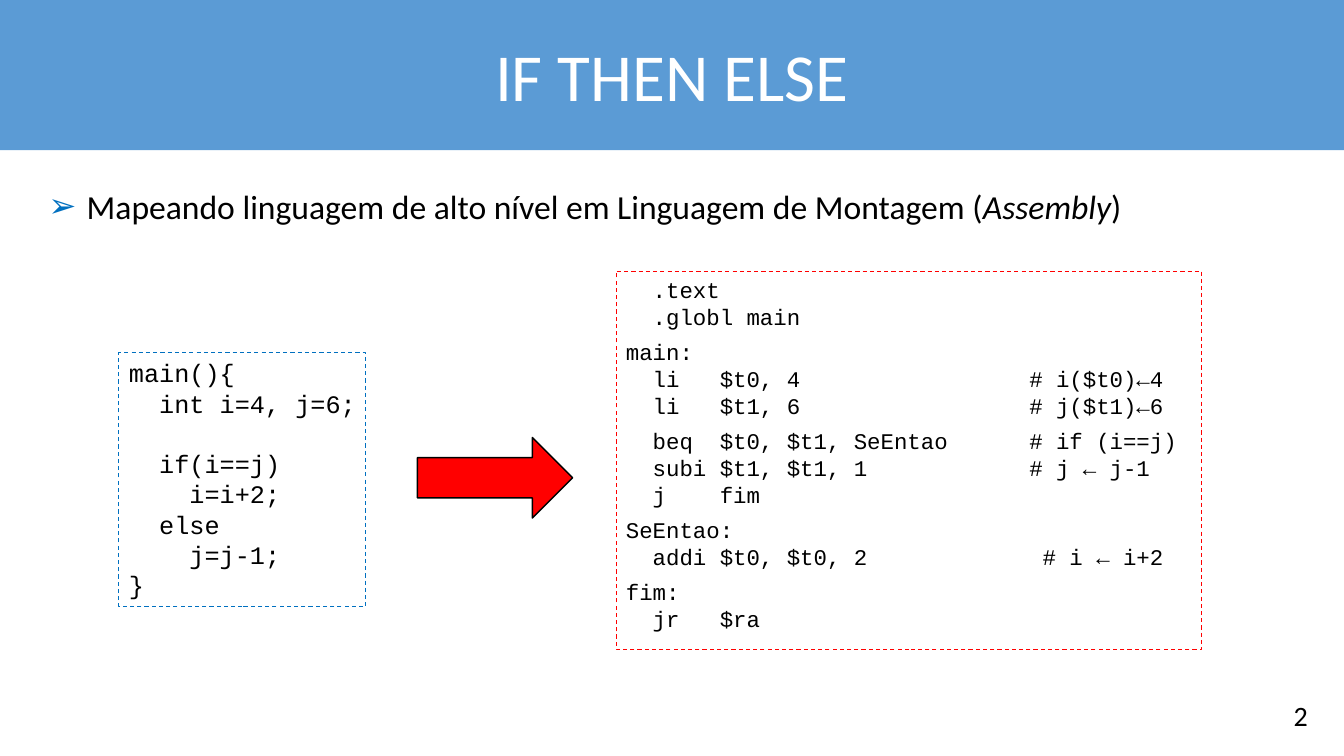
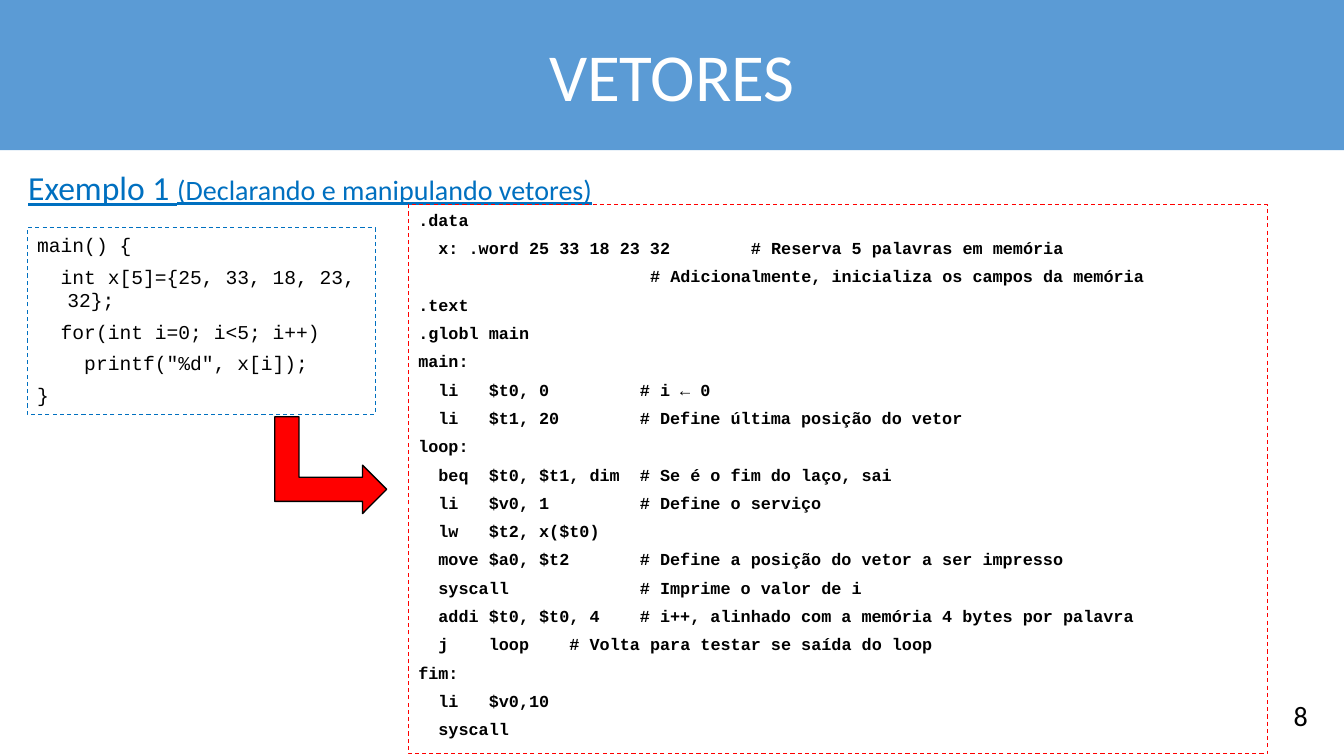
from lxml import etree
from pptx import Presentation
from pptx import util as u
from pptx.dml.color import RGBColor
from pptx.enum import dml, shapes, text
from pptx.oxml.ns import qn

Inches, Pt = u.Inches, u.Pt
COLORS = {"band": "5B9BD5", "white": "FFFFFF", "black": "000000",
          "blue": "0070C0", "red": "FF0000"}
PROSE, CODE = "Calibri", "Courier New"
LINE_HEIGHT = 1.2  # line pitch of code, relative to its font size
BAND = (0, 0, 13.33, 1.49)
NUMBER_BOX = (12.28, 6.88, 0.79, 0.44)

# Code is a list of groups of lines; "group_gap" separates the groups.
# "tab" is the distance between tab positions.
SLIDES = [
    {
        "title": "IF THEN ELSE",
        "number": "2",
        "heading": {
            "at": (0.38, 1.79, 11.18, 0.5), "bullet": "➢",
            "runs": [
                ("Mapeando linguagem de alto nível em Linguagem de Montagem (",
                 {"size": 24}),
                ("Assembly", {"size": 24, "italic": True}),
                (")", {"size": 24}),
            ],
        },
        "listings": [
            {
                "at": (1.18, 3.5, 2.45, 2.52), "border": "blue",
                "font": {"size": 18}, "group_gap": 21.6,
                "groups": [
                    ["main(){", "  int i=4, j=6;"],
                    ["  if(i==j)", "    i=i+2;", "  else", "    j=j-1;", "}"],
                ],
            },
            {
                "at": (6.11, 2.69, 5.81, 3.75), "border": "red",
                "font": {"size": 16}, "group_gap": 6, "tab": 4,
                "groups": [
                    ["  .text", "  .globl main"],
                    ["main:",
                     "  li   $t0, 4\t# i($t0)←4",
                     "  li   $t1, 6\t# j($t1)←6"],
                    ["  beq  $t0, $t1, SeEntao\t# if (i==j)",
                     "  subi $t1, $t1, 1\t# j ← j-1",
                     "  j    fim"],
                    ["SeEntao:", "  addi $t0, $t0, 2\t # i ← i+2"],
                    ["fim:", "  jr   $ra"],
                ],
            },
        ],
        "arrow": {"at": (4.14, 4.34, 1.54, 0.8), "rotation": 0,
                  "preset": shapes.MSO_SHAPE.RIGHT_ARROW},
    },
    {
        "title": "VETORES",
        "number": "8",
        "heading": {
            "at": (0.18, 1.61, 6.03, 0.5),
            "runs": [
                ("Exemplo 1 ",
                 {"size": 24, "underline": True, "color": "blue"}),
                ("(Declarando e manipulando vetores)",
                 {"size": 20, "underline": True, "color": "blue"}),
            ],
        },
        "listings": [
            {
                "at": (0.27, 2.26, 3.45, 1.85), "border": "blue",
                "font": {"size": 14}, "line_gap": 5.8, "hang": 0.3,
                "groups": [[
                    "main() {",
                    "  int x[5]={25, 33, 18, 23, 32};",
                    "  for(int i=0; i<5; i++)",
                    '    printf("%d", x[i]);',
                    "}",
                ]],
            },
            {
                "at": (4.05, 2.03, 8.52, 5.45), "border": "red",
                "font": {"size": 12, "bold": True}, "line_gap": 5.8,
                "hang": 0.3, "tab": 1,
                "groups": [[
                    ".data",
                    "  x: .word 25 33 18 23 32 \t# Reserva 5 palavras em memória",
                    "                     \t# Adicionalmente, inicializa os campos da memória",
                    ".text",
                    ".globl main",
                    "main:",
                    "  li   $t0, 0         # i ← 0",
                    "  li   $t1, 20        # Define última posição do vetor",
                    "loop:",
                    "  beq  $t0, $t1, dim  # Se é o fim do laço, sai",
                    "  li   $v0, 1         # Define o serviço",
                    "  lw   $t2, x($t0)",
                    "  move $a0, $t2       # Define a posição do vetor a ser impresso",
                    "  syscall             # Imprime o valor de i",
                    "  addi $t0, $t0, 4    # i++, alinhado com a memória 4 bytes por palavra",
                    "  j    loop \t  # Volta para testar se saída do loop",
                    "fim:",
                    "  li   $v0,10",
                    "  syscall",
                ]],
            },
        ],
        "arrow": {"at": (2.8, 4.06, 0.96, 1.11), "rotation": 90,
                  "preset": shapes.MSO_SHAPE.BENT_UP_ARROW},
    },
]


def rgb(name):
    return RGBColor.from_string(COLORS[name])


def place(part, at):
    part.left, part.top, part.width, part.height = map(Inches, at)


def set_frame(part, anchor=text.MSO_ANCHOR.TOP, side=0.1):
    frame = part.text_frame
    settings = {
        "word_wrap": True, "auto_size": text.MSO_AUTO_SIZE.NONE,
        "vertical_anchor": anchor,
        "margin_left": Inches(side), "margin_right": Inches(side),
        "margin_top": Inches(0.05), "margin_bottom": Inches(0.05),
    }
    for key, value in settings.items():
        setattr(frame, key, value)
    return frame


def add_run(paragraph, words, size, face=PROSE, color="black", **style):
    run = paragraph.add_run()
    run.text = words
    for key, value in {"name": face, "size": Pt(size), **style}.items():
        setattr(run.font, key, value)
    run.font.color.rgb = rgb(color)


def set_indent(paragraph, hang):
    """Hang every line but the first by the given inches."""
    props = paragraph._p.get_or_add_pPr()
    props.set("marL", str(Inches(hang)))
    props.set("indent", str(-Inches(hang)))
    return props


def set_bullet(props, bullet):
    if not bullet:
        etree.SubElement(props, qn("a:buNone"))
        return
    color = etree.SubElement(props, qn("a:buClr"))
    etree.SubElement(color, qn("a:srgbClr"), val=COLORS["blue"])
    etree.SubElement(props, qn("a:buChar"), char=bullet)


def fill_title(title, words):
    place(title, BAND)
    title.fill.solid()
    title.fill.fore_color.rgb = rgb("band")
    paragraph = set_frame(title, text.MSO_ANCHOR.MIDDLE, 0.8).paragraphs[0]
    paragraph.alignment = text.PP_ALIGN.CENTER
    add_run(paragraph, words, 48, color="white")


def fill_heading(body, heading):
    place(body, heading["at"])
    paragraph = set_frame(body).paragraphs[0]
    paragraph.space_before = Pt(0)
    bullet = heading.get("bullet")
    set_bullet(set_indent(paragraph, 0.38 if bullet else 0), bullet)
    for words, style in heading["runs"]:
        add_run(paragraph, words, **style)


def add_number(slide, number):
    box = slide.shapes.add_textbox(*map(Inches, NUMBER_BOX))
    paragraph = set_frame(box).paragraphs[0]
    paragraph.alignment = text.PP_ALIGN.RIGHT
    add_run(paragraph, number, 20)


def add_preset(slide, preset, at, line, width):
    part = slide.shapes.add_shape(preset, *map(Inches, at))
    part.shadow.inherit = False
    part.line.color.rgb = rgb(line)
    part.line.width = Pt(width)
    return part


def add_listing(slide, listing):
    """Add a dashed box holding source code, one paragraph a line."""
    box = add_preset(slide, shapes.MSO_SHAPE.RECTANGLE, listing["at"],
                     listing["border"], 0.75)
    box.fill.background()
    box.line.dash_style = dml.MSO_LINE.DASH
    frame = set_frame(box)
    line_gap = listing.get("line_gap", 0)
    lines = [(line, listing["group_gap"] if g and not i else line_gap)
             for g, group in enumerate(listing["groups"])
             for i, line in enumerate(group)]
    for index, (line, gap) in enumerate(lines):
        paragraph = frame.add_paragraph() if index else frame.paragraphs[0]
        paragraph.alignment = text.PP_ALIGN.LEFT
        paragraph.line_spacing = Pt(listing["font"]["size"] * LINE_HEIGHT)
        paragraph.space_before = Pt(gap)
        props = set_indent(paragraph, listing.get("hang", 0))
        props.set("defTabSz", str(Inches(listing.get("tab", 1))))
        add_run(paragraph, line, face=CODE, **listing["font"])


def add_arrow(slide, arrow):
    part = add_preset(slide, arrow["preset"], arrow["at"], "black", 1)
    part.rotation = arrow["rotation"]
    part.fill.solid()
    part.fill.fore_color.rgb = rgb("red")


def main():
    deck = Presentation()
    deck.slide_width, deck.slide_height = Inches(13.33), Inches(7.5)
    for content in SLIDES:
        slide = deck.slides.add_slide(deck.slide_layouts[1])
        fill_title(slide.shapes.title, content["title"])
        fill_heading(slide.placeholders[1], content["heading"])
        add_number(slide, content["number"])
        for listing in content["listings"]:
            add_listing(slide, listing)
        add_arrow(slide, content["arrow"])
    deck.save("out.pptx")


if __name__ == "__main__":
    main()
